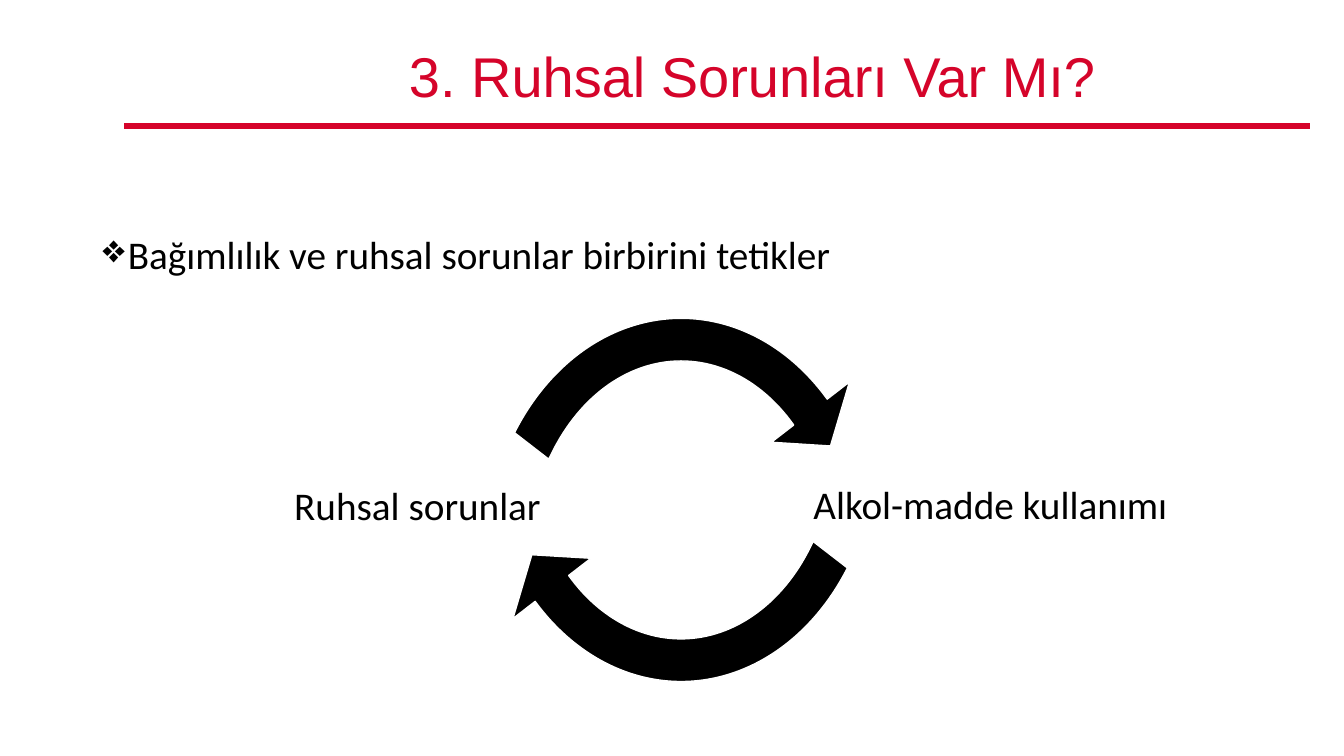
from dataclasses import dataclass

from lxml import etree
from pptx import Presentation
from pptx.dml.color import RGBColor
from pptx.enum.shapes import MSO_CONNECTOR, MSO_SHAPE
from pptx.enum.text import MSO_ANCHOR, MSO_AUTO_SIZE, PP_ALIGN
from pptx.oxml.ns import qn
from pptx.slide import Slide
from pptx.text.text import TextFrame
from pptx.util import Inches, Pt

CIRCULAR_ARROW = MSO_SHAPE.CIRCULAR_ARROW
STRAIGHT = MSO_CONNECTOR.STRAIGHT
LEFT, CENTER, JUSTIFY = PP_ALIGN.LEFT, PP_ALIGN.CENTER, PP_ALIGN.JUSTIFY
MIDDLE = MSO_ANCHOR.MIDDLE
NO_FIT, GROW = MSO_AUTO_SIZE.NONE, MSO_AUTO_SIZE.SHAPE_TO_FIT_TEXT

COLORS = {"red": "D5042A", "black": "000000", "white": "FFFFFF"}
ARROW_SWEEP = 55.92  # adjustment units between tail and head
BULLET_INDENT = Inches(0.25)


@dataclass(frozen=True)
class Box:
    left: float
    top: float
    width: float
    height: float

    def lengths(self) -> list[int]:
        return [Inches(n) for n in (self.left, self.top, self.width, self.height)]


@dataclass(frozen=True)
class CycleArrow:
    box: Box
    tail_angle: float


@dataclass(frozen=True)
class Label:
    text: str
    box: Box


CYCLE_ARROWS = [
    CycleArrow(Box(4.53, 2.88, 4.45, 5.38), 130.62),
    CycleArrow(Box(4.53, 1.68, 4.45, 5.36), 22.62),
]
LABELS = [
    Label("Ruhsal sorunlar", Box(2.82, 4.73, 2.96, 0.57)),
    Label("Alkol-madde kullanımı", Box(7.97, 4.72, 4.07, 0.57)),
]


def color(name: str) -> RGBColor:
    return RGBColor.from_string(COLORS[name])


def write_text(frame: TextFrame, text: str, *, size: float = 28, font: str = "Calibri",
               color_name: str = "black", align: PP_ALIGN = LEFT, spacing: float = 1.0,
               bullet: str = "", wrap: bool = True,
               auto_size: MSO_AUTO_SIZE = NO_FIT) -> None:
    frame.word_wrap = wrap
    frame.auto_size = auto_size
    paragraph = frame.paragraphs[0]
    paragraph.text = text
    paragraph.alignment = align
    paragraph.line_spacing = spacing
    if bullet:
        properties = paragraph._p.get_or_add_pPr()
        properties.set("marL", str(BULLET_INDENT))
        properties.set("indent", str(-BULLET_INDENT))
        etree.SubElement(properties, qn("a:buChar"), char=bullet)
    run_font = paragraph.runs[0].font
    run_font.size = Pt(size)
    run_font.name = font
    run_font.color.rgb = color(color_name)


def add_title(slide: Slide) -> None:
    title = slide.shapes.title
    title.left, title.top, title.width, title.height = Box(1.71, 0.39, 11.5, 0.79).lengths()
    title.text_frame.vertical_anchor = MIDDLE
    write_text(title.text_frame, "3. Ruhsal Sorunları Var Mı?", size=40, font="Arial",
               color_name="red", align=CENTER, spacing=0.9)


def add_title_rule(slide: Slide) -> None:
    rule = slide.shapes.add_connector(
        STRAIGHT, Inches(1.23), Inches(1.25), Inches(12.99), Inches(1.25))
    rule.line.color.rgb = color("red")
    rule.line.width = Pt(4.5)
    etree.SubElement(rule._element.spPr, qn("a:effectLst"))


def add_cycle_arrow(slide: Slide, arrow: CycleArrow) -> None:
    shape = slide.shapes.add_shape(CIRCULAR_ARROW, *arrow.box.lengths())
    shape.shadow.inherit = False
    values = (0.095, 6.84, arrow.tail_angle + ARROW_SWEEP, arrow.tail_angle, 0.11)
    for index, value in enumerate(values):
        shape.adjustments[index] = value
    shape.fill.solid()
    shape.fill.fore_color.rgb = color("black")
    shape.line.color.rgb = color("white")
    shape.line.width = Pt(1)


def main() -> None:
    presentation = Presentation()
    presentation.slide_width = Inches(13.33)
    presentation.slide_height = Inches(7.5)
    slide = presentation.slides.add_slide(presentation.slide_layouts[5])

    add_title_rule(slide)
    add_title(slide)
    statement = slide.shapes.add_textbox(*Box(0.92, 2, 11.5, 0.98).lengths())
    write_text(statement.text_frame, "Bağımlılık ve ruhsal sorunlar birbirini tetikler",
               align=JUSTIFY, spacing=1.5, bullet="❖")
    for arrow in CYCLE_ARROWS:
        add_cycle_arrow(slide, arrow)
    for label in LABELS:
        text_box = slide.shapes.add_textbox(*label.box.lengths())
        write_text(text_box.text_frame, label.text, wrap=False, auto_size=GROW)

    presentation.save("out.pptx")


if __name__ == "__main__":
    main()
